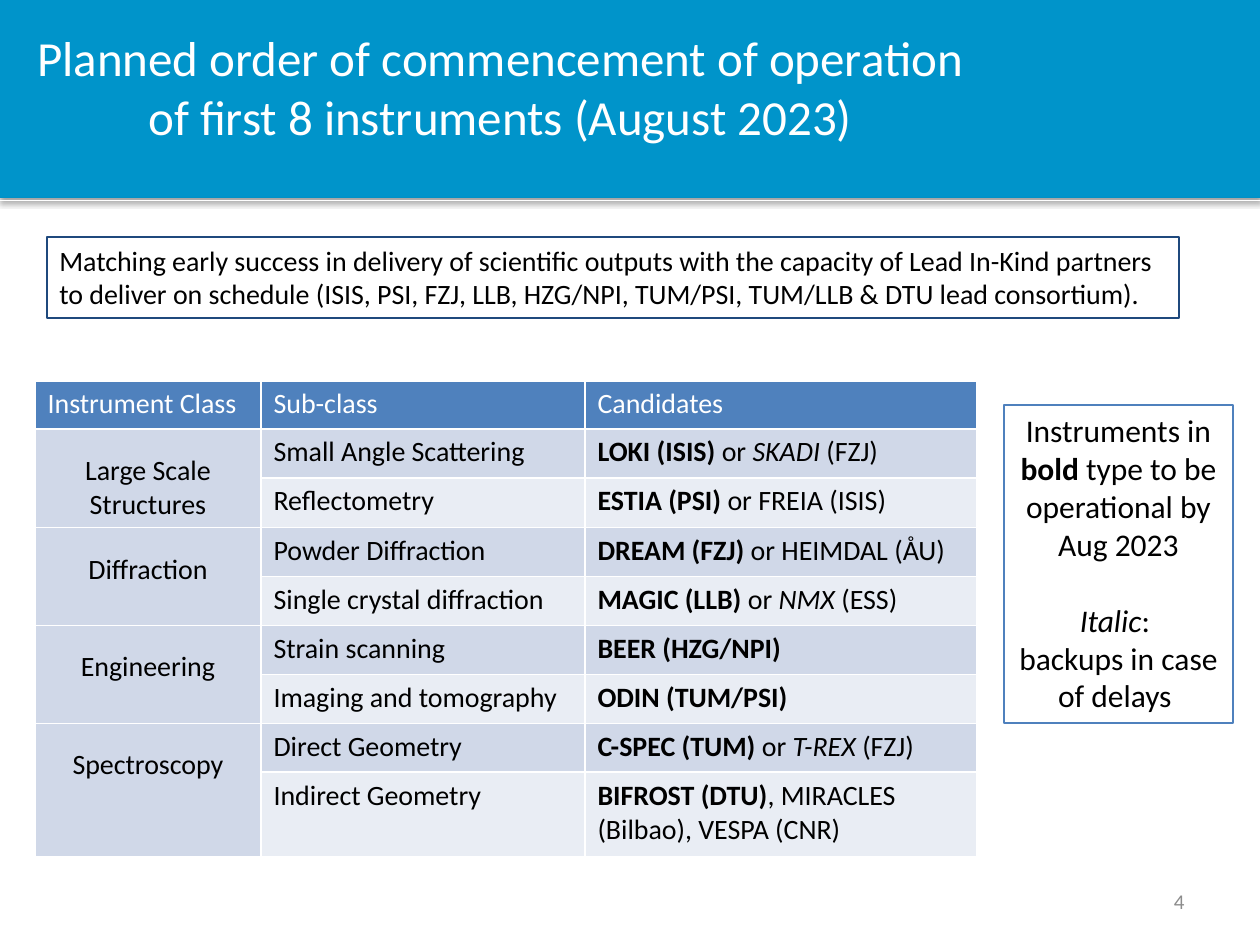
"""Build the slide on the planned start of the first eight instruments."""
import pptx
import pptx.dml.color
import pptx.enum.shapes
import pptx.enum.text
import pptx.oxml
import pptx.oxml.ns
import pptx.util

COLORS = {
    "band": "0094CA", "white": "FFFFFF", "black": "000000", "number": "8C8C8C",
    "note": "1F497D", "header": "4F81BD", "dark row": "D0D8E8", "light row": "E9EDF4",
}
ALIGN = pptx.enum.text.PP_ALIGN
SCALE = 914400 / 126


def px(*lengths):
    return [pptx.util.Emu(round(length * SCALE)) for length in lengths]


def write(para, spans, size, color="black", align=ALIGN.LEFT):
    para.alignment = align
    for text, style in spans:
        span = para.add_run()
        span.text = text
        span.font.name = "Calibri"
        span.font.size = pptx.util.Pt(size)
        span.font.bold = style == "bold"
        span.font.italic = style == "italic"
        span.font.color.rgb = pptx.dml.color.RGBColor.from_string(COLORS[color])


deck = pptx.Presentation()
deck.slide_width, deck.slide_height = px(1260, 945)
page = deck.slides.add_slide(deck.slide_layouts[5])
shapes = page.shapes

band = shapes.add_shape(pptx.enum.shapes.MSO_SHAPE.RECTANGLE, *px(0, 0, 1260, 198))
band.fill.solid()
band.fill.fore_color.rgb = pptx.dml.color.RGBColor.from_string(COLORS["band"])
band.line.fill.background()

rule = shapes.add_connector(pptx.enum.shapes.MSO_CONNECTOR.STRAIGHT, *px(0, 200, 1260, 200))
rule.line.color.rgb = pptx.dml.color.RGBColor.from_string(COLORS["white"])
rule.line.width = pptx.util.Pt(0.5)

for item, distance, opacity in [(band, 23000, 35000), (rule, 20000, 38000)]:
    item._element.spPr.append(pptx.oxml.parse_xml(
        f'<a:effectLst {pptx.oxml.ns.nsdecls("a")}>'
        f'<a:outerShdw blurRad="40000" dist="{distance}" dir="5400000" rotWithShape="0">'
        f'<a:srgbClr val="{COLORS["black"]}"><a:alpha val="{opacity}"/></a:srgbClr>'
        '</a:outerShdw></a:effectLst>'))

title = shapes.title
shapes._spTree.append(title._element)
title.left, title.top, title.width, title.height = px(12, 28, 976, 141)
frame = title.text_frame
frame.margin_left = frame.margin_top = frame.margin_right = frame.margin_bottom = 0
frame.vertical_anchor = pptx.enum.text.MSO_ANCHOR.TOP
frame.auto_size = pptx.enum.text.MSO_AUTO_SIZE.NONE
write(frame.paragraphs[0],
      [("Planned order of commencement of operation of first 8 instruments (August 2023)", "")],
      28, "white", ALIGN.CENTER)

number = shapes.add_textbox(*px(903, 876, 294, 50))
number.text_frame.word_wrap = True
number.text_frame.vertical_anchor = pptx.enum.text.MSO_ANCHOR.MIDDLE
write(number.text_frame.paragraphs[0], [("4", "")], 12, "number", ALIGN.RIGHT)

note_text = [[(
    "Matching early success in delivery of scientific outputs with the capacity of Lead In-Kind "
    "partners to deliver on schedule (ISIS, PSI, FZJ, LLB, HZG/NPI, TUM/PSI, TUM/LLB & DTU lead "
    "consortium).", "")]]
legend_text = [
    [("Instruments in ", ""), ("bold ", "bold"), ("type to be operational by Aug 2023", "")],
    [("Italic", "italic"), (": ", "")],
    [("backups in case of delays ", "")],
]
boxes = [
    ((47, 237, 1132, 81), "note", note_text, 16, ALIGN.LEFT),
    ((1004, 405, 229, 318), "header", legend_text, 18, ALIGN.CENTER),
]
for place, outline, paragraphs, size, align in boxes:
    box = shapes.add_textbox(*px(*place))
    box.line.color.rgb = pptx.dml.color.RGBColor.from_string(COLORS[outline])
    box.line.width = pptx.util.Pt(0.75)
    frame = box.text_frame
    frame.word_wrap = True
    for index, spans in enumerate(paragraphs):
        para = frame.add_paragraph() if index else frame.paragraphs[0]
        write(para, spans, size, align=align)
        if index == 1:
            para.space_before = pptx.util.Pt(22)

classes = ["Large Scale Structures", "Diffraction", "Engineering", "Spectroscopy"]
instruments = [
    ("Small Angle Scattering",
     [("LOKI (ISIS) ", "bold"), ("or ", ""), ("SKADI", "italic"), (" (FZJ)", "")]),
    ("Reflectometry", [("ESTIA (PSI) ", "bold"), ("or FREIA (ISIS)", "")]),
    ("Powder Diffraction", [("DREAM (FZJ) ", "bold"), ("or HEIMDAL (ÅU)", "")]),
    ("Single crystal diffraction",
     [("MAGIC (LLB) ", "bold"), ("or ", ""), ("NMX", "italic"), (" (ESS)", "")]),
    ("Strain scanning", [("BEER (HZG/NPI)", "bold")]),
    ("Imaging and tomography", [("ODIN (TUM/PSI)", "bold")]),
    ("Direct Geometry",
     [("C-SPEC (TUM) ", "bold"), ("or ", ""), ("T-REX", "italic"), (" (FZJ)", "")]),
    ("Indirect Geometry", [("BIFROST (DTU)", "bold"), (", MIRACLES (Bilbao), VESPA (CNR)", "")]),
]
widths = [226, 324, 392]
heights = [48] + [49] * 7 + [85]
table = shapes.add_table(len(heights), len(widths),
                         *px(35, 381, sum(widths), sum(heights))).table
for column, width in zip(table.columns, px(*widths)):
    column.width = width
for row, height in zip(table.rows, px(*heights)):
    row.height = height

for row_index, row in enumerate(table.rows):
    stripe = "dark row" if row_index % 2 else "light row"
    for cell in row.cells:
        cell.fill.solid()
        cell.fill.fore_color.rgb = pptx.dml.color.RGBColor.from_string(
            COLORS[stripe if row_index else "header"])

for column, heading in enumerate(["Instrument Class", "Sub-class", "Candidates"]):
    write(table.cell(0, column).text_frame.paragraphs[0], [(heading, "")], 16, "white")
for row, (subclass, candidates) in enumerate(instruments, 1):
    write(table.cell(row, 1).text_frame.paragraphs[0], [(subclass, "")], 16)
    write(table.cell(row, 2).text_frame.paragraphs[0], candidates, 16)
for index, name in enumerate(classes):
    top = 1 + 2 * index
    cell = table.cell(top, 0)
    cell.merge(table.cell(top + 1, 0))
    cell.margin_top = px(25)[0]
    write(cell.text_frame.paragraphs[0], [(name, "")], 16, align=ALIGN.CENTER)

deck.save("out.pptx")
